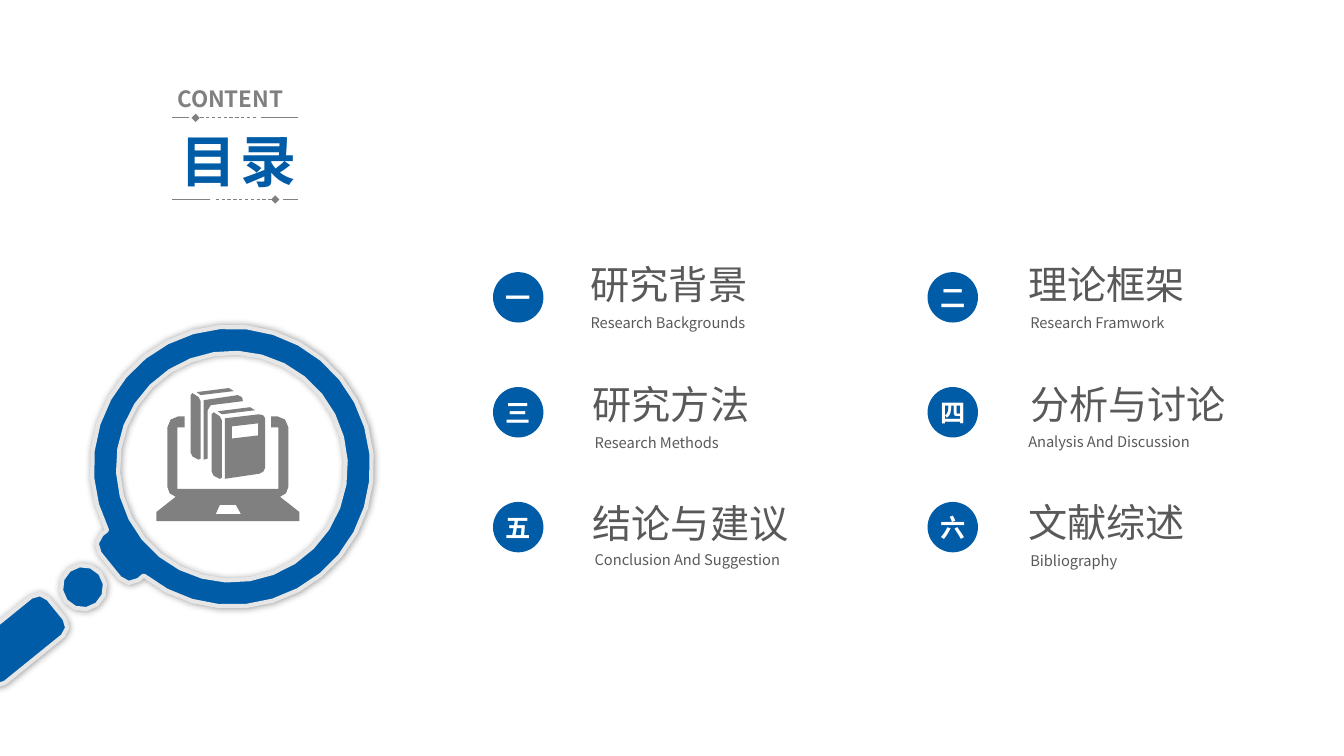
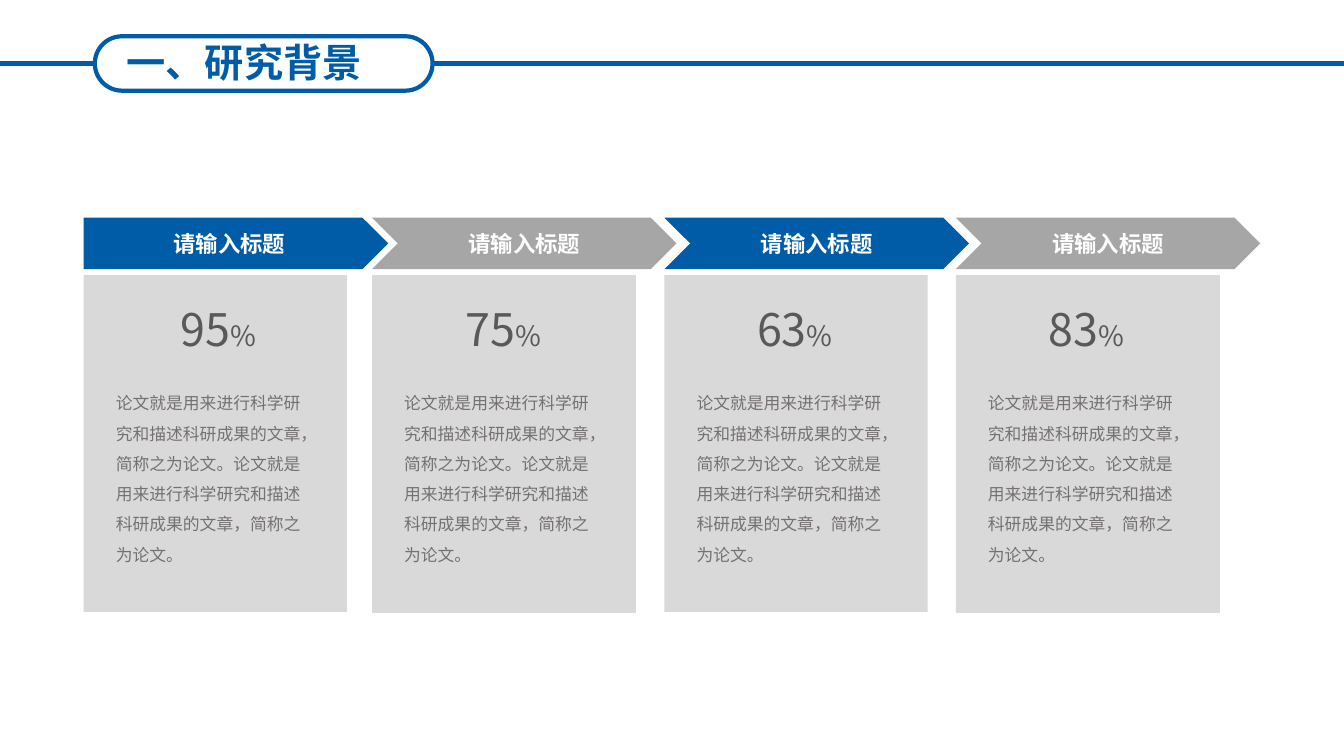
"""Build a contents slide and a research background slide."""
from dataclasses import dataclass
from math import cos, radians, sin

from lxml.etree import SubElement
from pptx import Presentation
from pptx.dml.color import RGBColor
from pptx.enum.dml import MSO_LINE
from pptx.enum.shapes import MSO_CONNECTOR, MSO_SHAPE as SHAPE
from pptx.enum.text import MSO_ANCHOR, PP_ALIGN as ALIGN
from pptx.oxml.ns import qn
from pptx.util import Inches, Pt

Point = tuple[float, float]
Contour = list[Point]


@dataclass(frozen=True)
class Theme:
    font: str = "Noto Sans CJK SC"
    blue: str = "005CA7"
    white: str = "FFFFFF"
    grey: str = "808080"
    silver: str = "A6A6A6"
    panel: str = "D9D9D9"
    rim: str = "E7E6E6"
    ink: str = "595959"
    body: str = "767171"
    hero: float = 40
    number: float = 32
    title: float = 28
    percent: float = 20
    badge: float = 18
    label: float = 16
    text: float = 12
    caption: float = 10.5


T = Theme()


@dataclass(frozen=True)
class Topic:
    mark: str
    title: str
    title_at: Point
    caption: str
    caption_at: Point
    caption_w: float


@dataclass(frozen=True)
class Card:
    x: float
    number: str
    number_x: float


TOPICS = [
    Topic("一", "研究背景", (5.76, 2.53), "Research Backgrounds", (5.76, 3.06), 1.8),
    Topic("二", "理论框架", (10.1, 2.53), "Research Framwork", (10.12, 3.06), 1.58),
    Topic("三", "研究方法", (5.78, 3.72), "Research Methods", (5.8, 4.25), 1.51),
    Topic("四", "分析与讨论", (10.12, 3.72), "Analysis And Discussion", (10.1, 4.24), 1.89),
    Topic("五", "结论与建议", (5.78, 4.9), "Conclusion And Suggestion", (5.8, 5.42), 2.15),
    Topic("六", "文献综述", (10.1, 4.89), "Bibliography", (10.12, 5.43), 1.09),
]
CARDS = [
    Card(0.83, "95", 1.69),
    Card(3.69, "75", 4.52),
    Card(6.59, "63", 7.41),
    Card(9.48, "83", 10.3),
]
CARD_TITLE = "请输入标题"
CARD_TEXT = "论文就是用来进行科学研究和描述科研成果的文章，简称之为论文。" * 2


def rgb(color: str) -> RGBColor:
    return RGBColor.from_string(color)


def style_run(r, size: float, color: str, bold: bool = False, spacing: float = 0) -> None:
    r.font.name, r.font.size, r.font.bold = T.font, Pt(size), bold
    r.font.color.rgb = rgb(color)
    rpr = r.font._element
    SubElement(rpr, qn("a:ea")).set("typeface", T.font)
    if spacing:
        rpr.set("spc", str(int(spacing * 100)))


def add_text(s, x: float, y: float, w: float, h: float, text: str, size: float, color: str,
             bold: bool = False, align=ALIGN.LEFT, spacing: float = 0, wrap: bool = True):
    tf = s.shapes.add_textbox(Inches(x), Inches(y), Inches(w), Inches(h)).text_frame
    tf.word_wrap = wrap
    p = tf.paragraphs[0]
    p.text, p.alignment = text, align
    style_run(p.runs[0], size, color, bold, spacing)
    return p


def paint(sp, fill: str | None, line: str | None = None, width: float = 0) -> None:
    sp.shadow.inherit = False
    if fill:
        sp.fill.solid()
        sp.fill.fore_color.rgb = rgb(fill)
    else:
        sp.fill.background()
    if line:
        sp.line.color.rgb, sp.line.width = rgb(line), Pt(width)
    else:
        sp.line.fill.background()


def add_shape(s, kind, x: float, y: float, w: float, h: float, fill: str | None,
              line: str | None = None, width: float = 0):
    sp = s.shapes.add_shape(kind, Inches(x), Inches(y), Inches(w), Inches(h))
    paint(sp, fill, line, width)
    return sp


def label_shape(sp, text: str, size: float) -> None:
    tf = sp.text_frame
    tf.word_wrap, tf.vertical_anchor = False, MSO_ANCHOR.MIDDLE
    p = tf.paragraphs[0]
    p.text, p.alignment = text, ALIGN.CENTER
    style_run(p.runs[0], size, T.white, True)


def add_line(s, x1: float, x2: float, y: float, color: str, width: float, diamond: bool = False) -> None:
    ln = s.shapes.add_connector(MSO_CONNECTOR.STRAIGHT, Inches(x1), Inches(y), Inches(x2), Inches(y))
    ln.line.color.rgb, ln.line.width = rgb(color), Pt(width)
    if diamond:
        ln.line.dash_style = MSO_LINE.DASH
        SubElement(ln.line._get_or_add_ln(), qn("a:tailEnd")).set("type", "diamond")
    SubElement(ln._element.spPr, qn("a:effectLst"))


def add_outline(s, contours: list[Contour]):
    emu = [[(Inches(x), Inches(y)) for x, y in c] for c in contours]
    fb = s.shapes.build_freeform(*emu[0][0])
    for i, points in enumerate(emu):
        if i:
            fb.move_to(*points[0])
        fb.add_line_segments(points[1:], close=True)
    return fb.convert_to_shape()


def arc(x: float, y: float, r: float, start: float, end: float, steps: int = 2) -> Contour:
    angles = [radians(start + (end - start) * i / steps) for i in range(steps + 1)]
    return [(x + r * cos(a), y + r * sin(a)) for a in angles]


def circle(x: float, y: float, r: float, sides: int) -> Contour:
    return arc(x, y, r, 0, 360, sides)[:-1]


def magnifier() -> list[Contour]:
    neck = arc(1.43, -0.16, 0.13, -90, 0) + arc(1.43, 0.16, 0.13, 0, 90)
    corners = [(3.1, 0.13), (2.36, 0.13), (2.36, -0.13), (3.1, -0.13)]
    handle = [p for i, (x, y) in enumerate(corners) for p in arc(x, y, 0.12, 90 * i, 90 * i + 90)]
    parts = [arc(0, 0, 1.39, 12, 348, 30) + neck, circle(0, 0, 1.13, 30), circle(1.9, 0, 0.22, 12), handle]
    c, d = cos(radians(141)), sin(radians(141))
    return [[(2.3 + x * c - y * d, 4.63 + x * d + y * c) for x, y in part] for part in parts]


def laptop_books() -> list[Contour]:
    middle = 2.26
    half = [(1.76, 4.85), (1.76, 4.24), (1.83, 4.24), (1.83, 4.13), *arc(1.77, 4.24, 0.11, 270, 180),
            *arc(1.76, 4.83, 0.1, 180, 100), (1.55, 5.08), (1.55, 5.17)]
    laptop = half + [(2 * middle - x, y) for x, y in reversed(half)]
    trackpad = [(2.18, 5.01), (2.34, 5.01), (2.39, 5.1), (2.14, 5.1)]
    page = [(1.95, 3.89), (1.99, 3.92), (2.32, 3.88), (2.27, 3.85)]
    spine = [(1.91, 3.9), (1.97, 3.94), (1.99, 3.98), (1.99, 4.55), (1.97, 4.56),
             (1.91, 4.53), (1.89, 4.49), (1.89, 3.92)]
    books = [[(x + dx, y + dy) for x, y in part]
             for dx, dy in [(0, 0), (0.21, 0.19)] for part in (page, spine)]
    back_cover = [(2.02, 3.97), (2.36, 3.92), (2.4, 3.94), (2.41, 3.98), (2.09, 4.02), (2.06, 4.07),
                  (2.06, 4.55), (2.02, 4.56)]
    front_cover = [(2.23, 4.15), (2.57, 4.11), (2.61, 4.12), (2.63, 4.15), (2.63, 4.64),
                   (2.61, 4.68), (2.57, 4.7), (2.23, 4.75)]
    window = [(2.3, 4.23), (2.56, 4.2), (2.56, 4.32), (2.3, 4.35)]
    return [laptop, trackpad, *books, back_cover, front_cover, window]


def add_glow(sp) -> None:
    effects = sp._element.spPr.find(qn("a:effectLst"))
    shadow = SubElement(effects, qn("a:outerShdw"), blurRad=str(Pt(5)), dist="0", dir="0")
    color = SubElement(shadow, qn("a:srgbClr"), val="000000")
    SubElement(color, qn("a:alpha"), val="40000")


def add_topic(s, i: int, topic: Topic) -> None:
    row, col = divmod(i, 2)
    badge = add_shape(s, SHAPE.OVAL, 4.89 + 4.31 * col, 2.7 + 1.14 * row, 0.5, 0.5, T.blue)
    label_shape(badge, topic.mark, T.badge)
    title_w = 0.2 + 0.39 * len(topic.title)
    add_text(s, *topic.title_at, title_w, 0.57, topic.title, T.title, T.ink, wrap=False)
    add_text(s, *topic.caption_at, topic.caption_w, 0.28, topic.caption, T.caption, T.ink, wrap=False)


def add_contents(s) -> None:
    add_text(s, 1.66, 0.8, 1.36, 0.37, "CONTENT", T.label, T.grey, True)
    add_text(s, 1.45, 1.21, 1.83, 0.77, "目录", T.hero, T.blue, True, ALIGN.CENTER, 3)
    rules = [(1.17, [(2.96, 2.59), (2.54, 1.94), (1.87, 1.71)]),
             (1.98, [(1.71, 2.08), (2.14, 2.73), (2.81, 2.96)])]
    for y, spans in rules:
        for i, (x1, x2) in enumerate(spans):
            add_line(s, x1, x2, y, T.grey, 0.6, i == 1)
    for i, topic in enumerate(TOPICS):
        add_topic(s, i, topic)
    lens = add_outline(s, magnifier())
    paint(lens, T.blue, T.rim, 3)
    add_glow(lens)
    paint(add_outline(s, laptop_books()), T.grey)


def add_header(s, title: str) -> None:
    for x1, x2 in [(0, 0.94), (4.3, 13.33)]:
        add_line(s, x1, x2, 0.63, T.blue, 3)
    pill = add_shape(s, SHAPE.ROUNDED_RECTANGLE, 0.94, 0.36, 3.35, 0.54, None, T.blue, 3)
    pill.adjustments[0] = 0.5
    add_text(s, 0.73, 0.33, 3.38, 0.57, title, T.title, T.blue, True, ALIGN.CENTER)


def add_card(s, i: int, card: Card) -> None:
    kind = SHAPE.CHEVRON if i else SHAPE.PENTAGON
    arrow = add_shape(s, kind, card.x, 2.16, 3.02, 0.51, T.silver if i % 2 else T.blue)
    label_shape(arrow, CARD_TITLE, T.label)
    add_shape(s, SHAPE.RECTANGLE, card.x, 2.73, 2.61, 3.34, T.panel, T.panel if i % 2 else None, 0.25)
    p = add_text(s, card.x + 0.22, 3.75, 2.18, 1.92, CARD_TEXT, T.text, T.body)
    p.line_spacing = 1.5
    p = add_text(s, card.number_x, 2.94, 0.98, 0.64, card.number, T.number, T.ink, wrap=False)
    r = p.add_run()
    r.text = "%"
    style_run(r, T.percent, T.ink)


def main() -> None:
    prs = Presentation()
    prs.slide_width, prs.slide_height = Inches(13.33), Inches(7.5)
    blank = prs.slide_layouts[6]
    add_contents(prs.slides.add_slide(blank))
    s = prs.slides.add_slide(blank)
    add_header(s, "一、研究背景")
    for i, card in enumerate(CARDS):
        add_card(s, i, card)
    prs.save("out.pptx")


if __name__ == "__main__":
    main()
